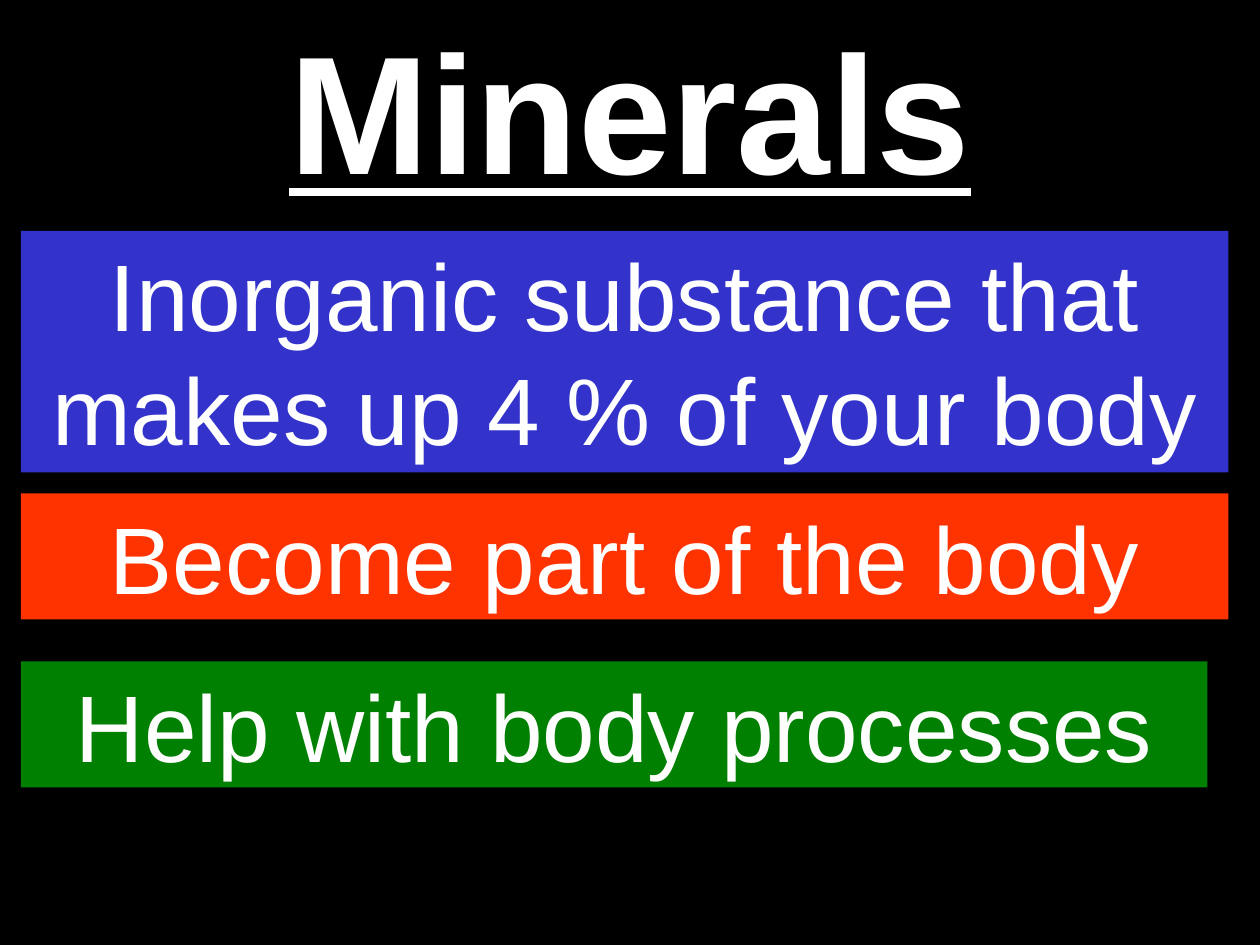
from lxml.etree import SubElement
from pptx import Presentation
from pptx.dml.color import RGBColor
from pptx.enum.shapes import MSO_SHAPE
from pptx.enum.text import MSO_ANCHOR, MSO_AUTO_SIZE, PP_ALIGN
from pptx.oxml.ns import qn
from pptx.util import Inches, Pt

COLORS = {
    "background": "000000",
    "text": "FFFFFF",
    "definition": "3333CC",
    "role": "FF3300",
    "help": "008000",
}
FONT = "Arial"
BAR_LEFT = 2


def color(name):
    return RGBColor.from_string(COLORS[name])


def grid(*cells):
    """Turn grid cells, twelve to the inch, into lengths."""
    return [Inches(cell / 12) for cell in cells]


def write_text(shape, text, size, heading=False):
    frame = shape.text_frame
    frame.word_wrap = True
    frame.auto_size = MSO_AUTO_SIZE.SHAPE_TO_FIT_TEXT
    frame.vertical_anchor = MSO_ANCHOR.TOP
    para = frame.paragraphs[0]
    para.text = text
    para.alignment = PP_ALIGN.CENTER
    # Space before is half a line
    before = SubElement(para._p.get_or_add_pPr(), qn("a:spcBef"))
    SubElement(before, qn("a:spcPct"), val="50000")
    font = para.font
    font.name, font.size = FONT, Pt(size)
    font.bold = font.underline = heading
    font.color.rgb = color("text")


def add_title(page, text):
    box = page.shapes.add_textbox(*grid(8, 0, 104, 20.4))
    write_text(box, text, 96, heading=True)


def add_bar(page, text, fill, top, width, height):
    bar = page.shapes.add_shape(
        MSO_SHAPE.RECTANGLE, *grid(BAR_LEFT, top, width, height))
    bar.shadow.inherit = False
    bar.fill.solid()
    bar.fill.fore_color.rgb = color(fill)
    bar.line.fill.background()
    write_text(bar, text, 54)


def main():
    deck = Presentation()
    deck.slide_width, deck.slide_height = Inches(10), Inches(7.5)
    page = deck.slides.add_slide(deck.slide_layouts[6])
    page.background.fill.solid()
    page.background.fill.fore_color.rgb = color("background")

    # Heading
    add_title(page, "Minerals")

    # Facts: text, fill, top, width, height
    add_bar(page, "Inorganic substance that makes up 4 % of your body",
            "definition", 22, 115, 23)
    add_bar(page, "Become part of the body", "role", 47, 115, 12)
    add_bar(page, "Help with body processes", "help", 63, 113, 12)

    deck.save("out.pptx")


if __name__ == "__main__":
    main()
